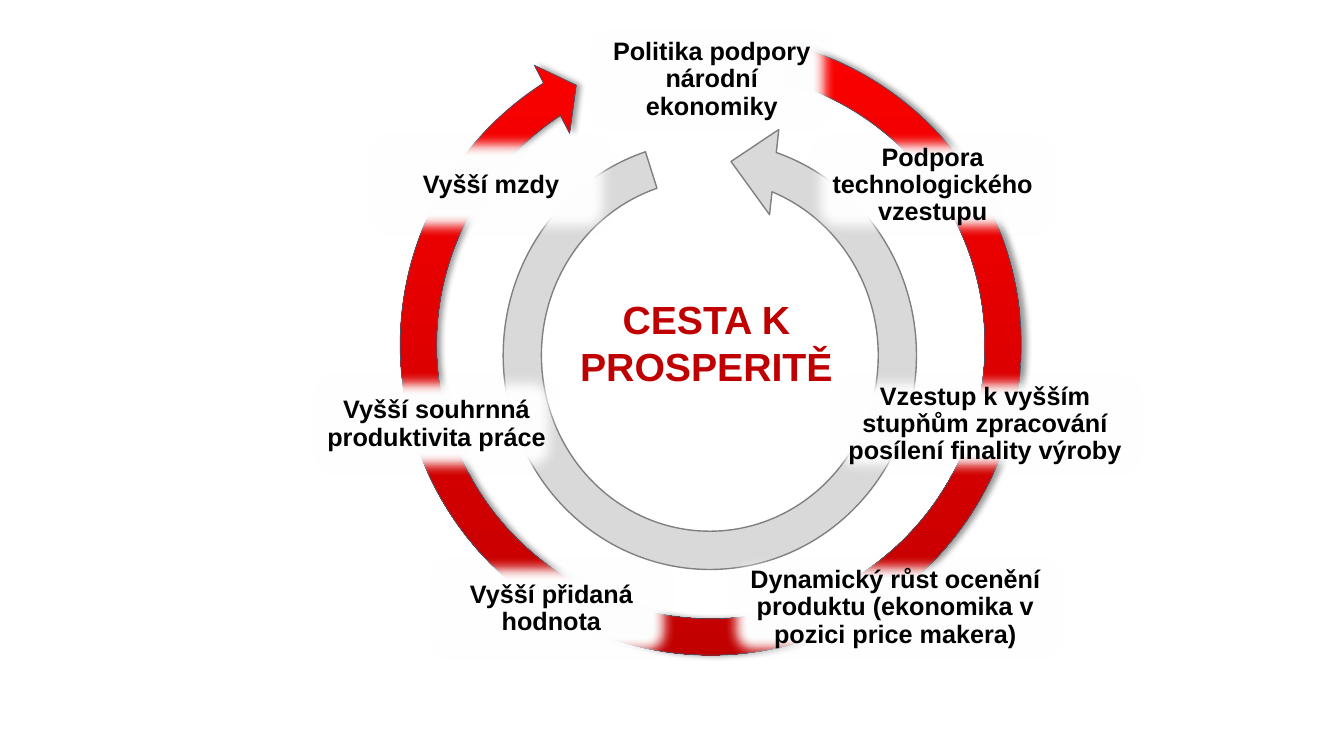
import pptx
import pptx.util
import pptx.dml.color
import pptx.enum.shapes
import pptx.enum.text
import pptx.oxml
import pptx.oxml.ns

Inches, Pt = pptx.util.Inches, pptx.util.Pt
RGBColor = pptx.dml.color.RGBColor
SHAPE = pptx.enum.shapes.MSO_SHAPE

RED = RGBColor(0xFF, 0x00, 0x00)
DARK_RED = RGBColor(0xC0, 0x00, 0x00)
LIGHT_GREY = RGBColor(0xD9, 0xD9, 0xD9)
GREY = RGBColor(0x80, 0x80, 0x80)
SLATE = RGBColor(0x44, 0x54, 0x6A)
WHITE = RGBColor(0xFF, 0xFF, 0xFF)
BLACK = RGBColor(0x00, 0x00, 0x00)

# Stages clockwise: centre from the ring's centre and plate width, in % of the ring
NARROW, PLATE_HEIGHT, TEXT_MARGIN = 37.5, 15.85, 0.8
STAGES = [
    ("Politika podpory národní ekonomiky", 0.15, -40.09, NARROW),
    ("Podpora technologického vzestupu", 33.54, -24.09, NARROW),
    ("Vzestup k vyšším stupňům zpracování posílení finality výroby",
     41.46, 12.04, 47.56),
    ("Dynamický růst ocenění produktu (ekonomika v pozici price makera)",
     27.9, 39.79, 51.52),
    ("Vyšší přidaná hodnota", -24.09, 39.94, NARROW),
    ("Vyšší souhrnná produktivita práce", -41.46, 12.04, NARROW),
    ("Vyšší mzdy", -33.23, -24.09, NARROW),
]
STAGE_FONT = {"name": "Arial", "size": Pt(18), "bold": True}
TITLE_FONT = {"name": "Arial", "size": Pt(28), "bold": True}

SHADOW = ('<a:outerShdw blurRad="50800" dist="38100" dir="0" algn="l" rotWithShape="0">'
          '<a:srgbClr val="000000"><a:alpha val="40000"/></a:srgbClr></a:outerShdw>')
SOFT_EDGE = '<a:softEdge rad="112500"/>'


def set_effect(shape, effect):
    shape.shadow.inherit = False
    effects = shape._element.spPr.find(pptx.oxml.ns.qn("a:effectLst"))
    namespace = pptx.oxml.ns.nsdecls("a")
    effects.append(pptx.oxml.parse_xml(effect.replace(" ", f" {namespace} ", 1)))


def add_label(slide, box, text, font, color, inset=None):
    label = slide.shapes.add_textbox(*box)
    frame = label.text_frame
    frame.word_wrap = True
    if inset is not None:
        for side in ("left", "top", "right", "bottom"):
            setattr(frame, f"margin_{side}", inset)
    paragraph = frame.paragraphs[0]
    paragraph.alignment = pptx.enum.text.PP_ALIGN.CENTER
    run = paragraph.add_run()
    run.text = text
    for key, value in font.items():
        setattr(run.font, key, value)
    run.font.color.rgb = color
    return label


def add_arrow(slide, box, adjustments, line_color, line_width):
    arrow = slide.shapes.add_shape(SHAPE.CIRCULAR_ARROW, *box)
    for index, value in enumerate(adjustments):
        arrow.adjustments[index] = value
    arrow.shadow.inherit = False
    arrow.line.color.rgb = line_color
    arrow.line.width = Pt(line_width)
    return arrow


def add_inner_arrow(slide, box):
    arrow = add_arrow(slide, box, (0.083, 7.866, 204.398, 10.532, 0.093), GREY, 1)
    arrow.fill.solid()
    arrow.fill.fore_color.rgb = LIGHT_GREY
    arrow.rotation = 270
    arrow._element.spPr.xfrm.set("flipV", "1")


def add_outer_arrow(slide, box):
    arrow = add_arrow(slide, box, (0.055, 3.307, 142.259, 171.178, 0.058), SLATE, 0.5)
    arrow.fill.gradient()
    arrow.fill.gradient_angle = 270
    for stop, color, position in zip(arrow.fill.gradient_stops, (RED, DARK_RED), (0, 1)):
        stop.color.rgb = color
        stop.position = position
    set_effect(arrow, SHADOW)


def add_stage(slide, ring, text, x, y, width):
    left, top, side, _ = ring
    percent = side / 100

    def centred(w, h):
        corner = (left + (50 + x - w / 2) * percent, top + (50 + y - h / 2) * percent)
        return [int(length) for length in (*corner, w * percent, h * percent)]

    # White plate that fades out over the ring
    plate = slide.shapes.add_shape(SHAPE.ROUNDED_RECTANGLE, *centred(width, PLATE_HEIGHT))
    plate.fill.solid()
    plate.fill.fore_color.rgb = WHITE
    plate.line.fill.background()
    set_effect(plate, SOFT_EDGE)

    # Stage name
    text_box = centred(width - 2 * TEXT_MARGIN, PLATE_HEIGHT - 2 * TEXT_MARGIN)
    label = add_label(slide, text_box, text, STAGE_FONT, BLACK, Inches(0.07))
    label.text_frame.vertical_anchor = pptx.enum.text.MSO_ANCHOR.MIDDLE
    label.text_frame.paragraphs[0].line_spacing = 0.9


def add_cycle(slide, ring):
    add_outer_arrow(slide, ring)
    for stage in STAGES:
        add_stage(slide, ring, *stage)


def main():
    deck = pptx.Presentation()
    deck.slide_width, deck.slide_height = Inches(13.33), Inches(7.5)
    slide = deck.slides.add_slide(deck.slide_layouts[6])

    def box(*lengths):
        return [Inches(length) for length in lengths]

    add_inner_arrow(slide, box(4.68, 1.24, 4.72, 4.57))
    add_cycle(slide, box(3.77, 0.14, 6.56, 6.56))
    # Goal in the middle of the cycle
    add_label(slide, box(4.86, 2.88, 4.29, 1.05), "CESTA K PROSPERITĚ", TITLE_FONT, DARK_RED)
    deck.save("out.pptx")


if __name__ == "__main__":
    main()
